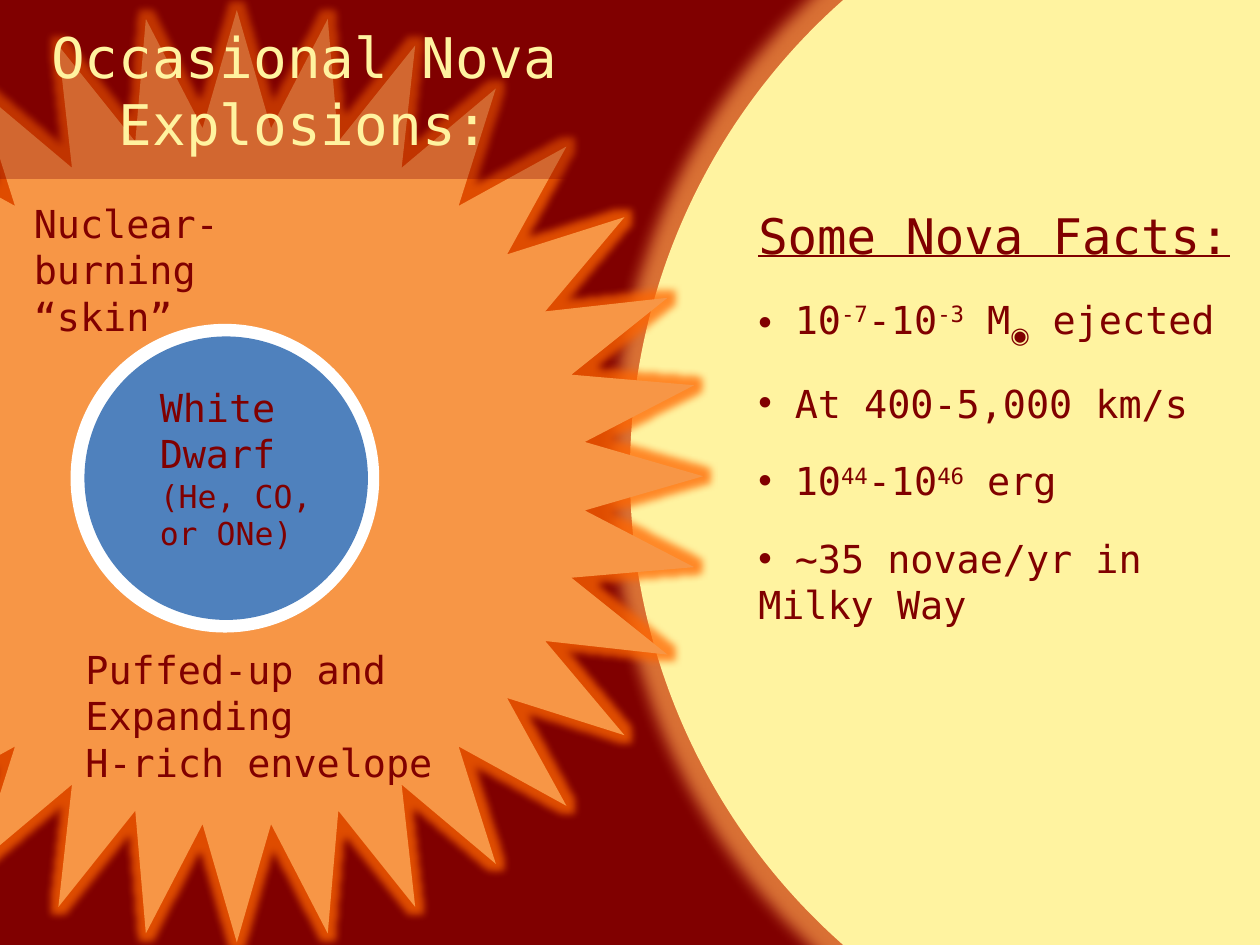
from lxml import etree
from pptx import Presentation, util as u
from pptx.dml.color import RGBColor
from pptx.enum import shapes as sh, text as tx
from pptx.oxml import ns

W, H = 10, 7.5
RED, CREAM, ORANGE = "800000", "FFF3A0", "F79646"
MONO = "DejaVu Sans Mono"
OVAL = sh.MSO_SHAPE.OVAL


def paint(color, hue):
    color.rgb = RGBColor.from_string(hue)


def sub(node, tag, **attrs):
    return etree.SubElement(node, ns.qn(tag), attrs)


def fade(color, share):
    """Give a colour node an opacity from 0 to 100."""
    sub(color, "a:alpha", val=str(share * 1000))


def add_form(slide, kind, box, hue, alpha=None, glow=None):
    form = slide.shapes.add_shape(kind, *map(u.Inches, box))
    form.shadow.inherit = False
    form.fill.solid()
    paint(form.fill.fore_color, hue)
    form.line.fill.background()
    props = form._element.spPr
    if alpha:
        fade(props.find(".//" + ns.qn("a:srgbClr")), alpha)
    if glow:
        tint, size = glow
        halo = sub(props.find(ns.qn("a:effectLst")), "a:glow", rad=str(u.Pt(size)))
        fade(sub(halo, "a:srgbClr", val=tint), 75)
    return form


def add_run(para, words, size=22, hue=RED, face=MONO, line=False, base=0):
    run = para.add_run()
    run.text = words
    font = run.font
    font.size, font.name = u.Pt(size), face
    paint(font.color, hue)
    if line:
        font.underline = True
    if base:
        run._r.get_or_add_rPr().set("baseline", str(base * 1000))


def write(frame, paras, after=0, align=None, **style):
    """Each paragraph is (bullet, [(words, format), ...])."""
    frame.word_wrap = True
    for i, (dot, runs) in enumerate(paras):
        para = frame.add_paragraph() if i else frame.paragraphs[0]
        para.space_after = u.Pt(after)
        if align:
            para.alignment = align
        if dot:
            props = para._p.get_or_add_pPr()
            sub(props, "a:buFont", typeface="Arial")
            sub(props, "a:buChar", char="•")
        for words, form in runs:
            add_run(para, words, **{**style, **form})


def add_text(slide, box, paras, **style):
    area = slide.shapes.add_textbox(*map(u.Inches, box))
    write(area.text_frame, paras, **style)


def plain(words, dot=False, **form):
    return dot, [(words, form)]


def bend(a, b, c, d, steps=10):
    """Points along a cubic curve, without its start."""
    for i in range(1, steps + 1):
        t = i / steps
        s = 1 - t
        yield tuple(s**3 * p + 3 * s * s * t * q + 3 * s * t * t * r + t**3 * e
                    for p, q, r, e in zip(a, b, c, d))


def add_arrow(slide, start, *curves):
    pen = slide.shapes.build_freeform(*start, scale=u.Inches(1))
    for curve in curves:
        pen.add_line_segments(list(bend(start, *curve)), close=False)
        start = curve[-1]
    arrow = pen.convert_to_shape()
    arrow.shadow.inherit = False
    arrow.fill.background()
    paint(arrow.line.color, RED)
    arrow.line.width = u.Pt(3)
    sub(arrow.line._get_or_add_ln(), "a:tailEnd", type="arrow")


def main():
    deck = Presentation()
    deck.slide_width, deck.slide_height = u.Inches(W), u.Inches(H)
    slide = deck.slides.add_slide(deck.slide_layouts[6])
    back = slide.background.fill
    back.solid()
    paint(back.fore_color, RED)

    # Companion star and exploding envelope
    add_form(slide, OVAL, (W / 2, (H - W) / 2, W, W), CREAM, glow=(ORANGE, 18))
    add_form(slide, sh.MSO_SHAPE.STAR_32_POINT, (-1.82, 0.08, 7.4, 7.4),
             ORANGE, glow=("FF6600", 8))

    # Title band
    band = add_form(slide, sh.MSO_SHAPE.RECTANGLE, (-0.17, 0, 5.17, 1.42), RED, alpha=31)
    band.text_frame.vertical_anchor = tx.MSO_ANCHOR.MIDDLE
    write(band.text_frame, [plain("Occasional Nova Explosions:")],
          align=tx.PP_ALIGN.CENTER, size=32, hue=CREAM)

    # White dwarf with its burning skin
    add_form(slide, OVAL, (0.56, 2.57, 2.45, 2.45), "FFFFFF")
    add_form(slide, OVAL, (0.67, 2.67, 2.25, 2.25), "4F81BD")

    # Facts
    up, low = {"base": 30}, {"base": -25, "face": "Arial"}
    add_text(slide, (5.92, 1.58, 4.33, 3.43), [
        plain("Some Nova Facts:", size=28, line=True),
        (True, [(" 10", {}), ("-7", up), ("-10", {}), ("-3", up),
                (" M", {}), ("◉", low), (" ejected", {})]),
        plain(" At 400-5,000 km/s", dot=True),
        (True, [(" 10", {}), ("44", up), ("-10", {}), ("46", up), (" erg", {})]),
        plain(" ~35 novae/yr in Milky Way", dot=True),
    ], after=18)

    # Labels
    add_text(slide, (1.17, 3, 1.67, 1.45),
             [plain("White Dwarf"), plain("(He, CO, or ONe)", size=18)])
    add_text(slide, (0.58, 5.08, 3, 1.21),
             [plain("Puffed-up and Expanding"), plain("H-rich envelope")])
    add_text(slide, (0.17, 1.54, 1.92, 1.21), [plain("Nuclear-burning “skin”")])
    add_arrow(slide, (1.67, 2.14),
              ((1.81, 2.1), (1.96, 2.07), (2.02, 2.13)),
              ((2.08, 2.19), (2.07, 2.34), (2.05, 2.5)))

    deck.save("out.pptx")


if __name__ == "__main__":
    main()
